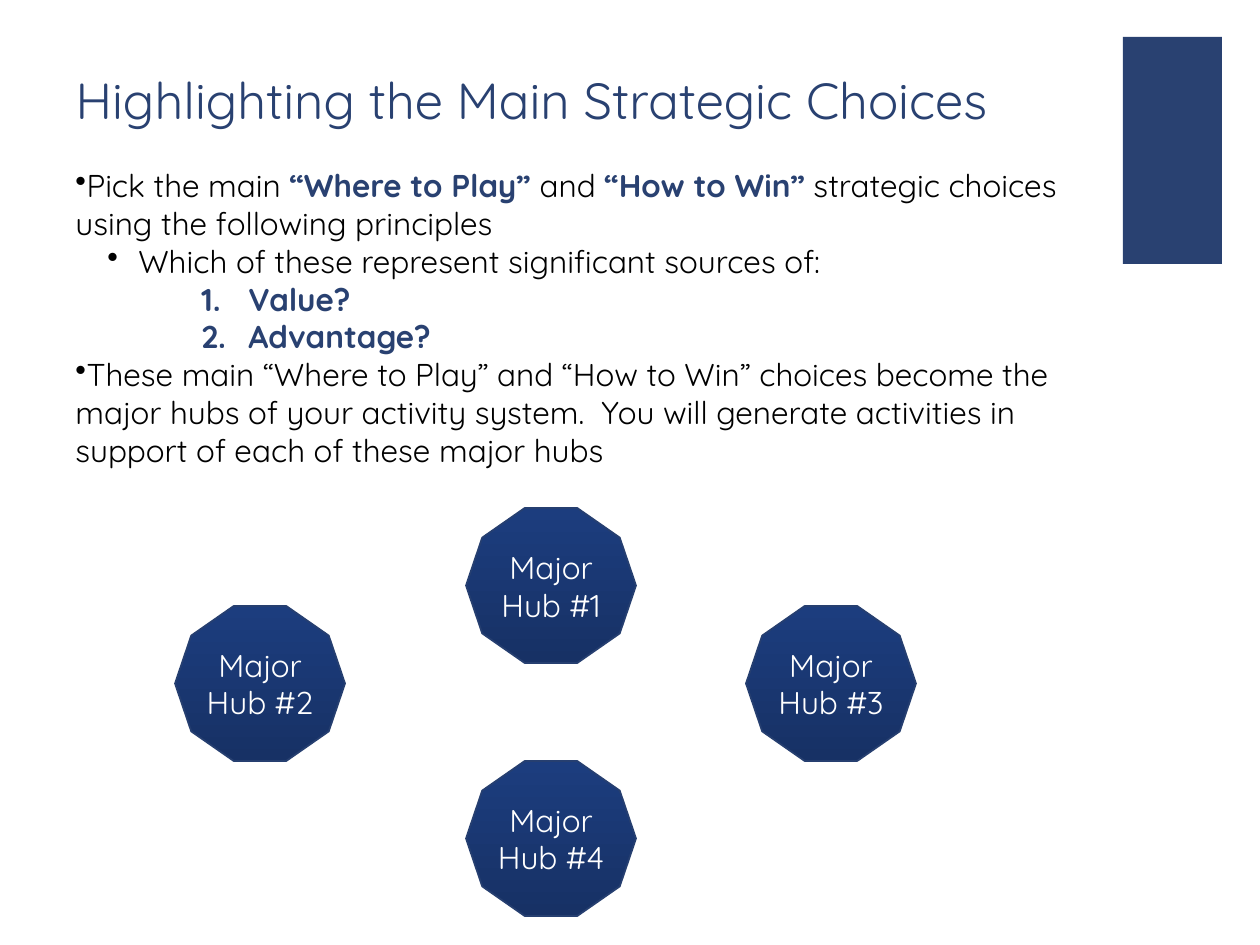
"""Build the slide on the main strategic choices and their four major hubs."""
from dataclasses import dataclass
from pptx import Presentation
from pptx.dml.color import RGBColor
from pptx.enum.shapes import MSO_SHAPE
from pptx.enum.text import MSO_ANCHOR, PP_ALIGN
from pptx.oxml.ns import qn
from pptx.util import Pt
from lxml.etree import SubElement


@dataclass(frozen=True)
class Theme:
    font: str = "Quicksand"
    navy: str = "294171"
    black: str = "000000"
    white: str = "FFFFFF"
    deep: str = "173165"
    light: str = "1C3D7E"
    edge: str = "263F70"
    head: int = 29
    body: int = 18


THEME = Theme()
TITLE = "Highlighting the Main Strategic Choices"
POINTS = [
    (0, [("Pick the main ", False), ("“Where to Play” ", True), ("and ", False),
         ("“How to Win”", True),
         (" strategic choices using the following principles", False)]),
    (1, [("Which of these represent significant sources of:", False)]),
    (2, [("Value?", True)]),
    (2, [("Advantage?", True)]),
    (0, [("These main “Where to Play” and “How to Win” choices become the major hubs "
          "of your activity system.  You will generate activities in support of each "
          "of these major hubs", False)]),
]
LEVELS = [(0, 0, "buChar", {"char": "•"}),
          (63, -31, "buChar", {"char": "•"}),
          (173, -47, "buAutoNum", {"type": "arabicPeriod"})]
HUBS = [(466, 508), (175, 606), (746, 606), (466, 761)]
HUB_SIZE = (170, 155)
SCALE = 914400 / 126


def px(num):
    return round(num * SCALE)


def box(*nums):
    return [px(num) for num in nums]


def tint(code):
    return RGBColor.from_string(code)


def write(para, text, size, color, bold=False):
    run = para.add_run()
    run.text = text
    font = run.font
    font.name, font.size, font.bold = THEME.font, Pt(size), bold
    font.color.rgb = tint(color)


def add_title(slide):
    title = slide.shapes.title
    title.left, title.top, title.width, title.height = box(63, -21, 1018, 157)
    frame = title.text_frame
    frame.vertical_anchor = MSO_ANCHOR.BOTTOM
    para = frame.paragraphs[0]
    para.alignment = PP_ALIGN.LEFT
    write(para, TITLE, THEME.head, THEME.navy)


def add_bar(slide):
    bar = slide.shapes.add_shape(MSO_SHAPE.RECTANGLE, *box(1123, 37, 99, 227))
    bar.shadow.inherit = False
    bar.fill.solid()
    bar.fill.fore_color.rgb = tint(THEME.navy)
    bar.line.fill.background()


def add_points(slide):
    frame = slide.shapes.add_textbox(*box(63, 160, 1018, 357)).text_frame
    frame.word_wrap = True
    for num, (level, runs) in enumerate(POINTS):
        para = frame.add_paragraph() if num else frame.paragraphs[0]
        para.level = level
        left, hang, kind, attrs = LEVELS[level]
        props = para._p.get_or_add_pPr()
        props.set("marL", str(px(left)))
        props.set("indent", str(px(hang)))
        SubElement(props, qn("a:" + kind), attrs)
        for text, strong in runs:
            color = THEME.navy if strong else THEME.black
            write(para, text, THEME.body, color, strong)


def add_hub(slide, num, spot):
    hub = slide.shapes.add_shape(MSO_SHAPE.DECAGON, *box(*spot, *HUB_SIZE))
    hub.shadow.inherit = False
    hub.fill.gradient()
    hub.fill.gradient_angle = 90
    for stop, color in zip(hub.fill.gradient_stops, (THEME.deep, THEME.light)):
        stop.color.rgb = tint(color)
    hub.line.color.rgb = tint(THEME.edge)
    hub.line.width = Pt(1)
    frame = hub.text_frame
    frame.word_wrap = True
    frame.vertical_anchor = MSO_ANCHOR.MIDDLE
    para = frame.paragraphs[0]
    para.alignment = PP_ALIGN.CENTER
    write(para, f"Major Hub #{num}", THEME.body, THEME.white)


def main():
    deck = Presentation()
    deck.slide_width, deck.slide_height = box(1260, 945)
    slide = deck.slides.add_slide(deck.slide_layouts[5])
    add_bar(slide)
    add_title(slide)
    add_points(slide)
    for num, spot in enumerate(HUBS, 1):
        add_hub(slide, num, spot)
    deck.save("out.pptx")


if __name__ == "__main__":
    main()
